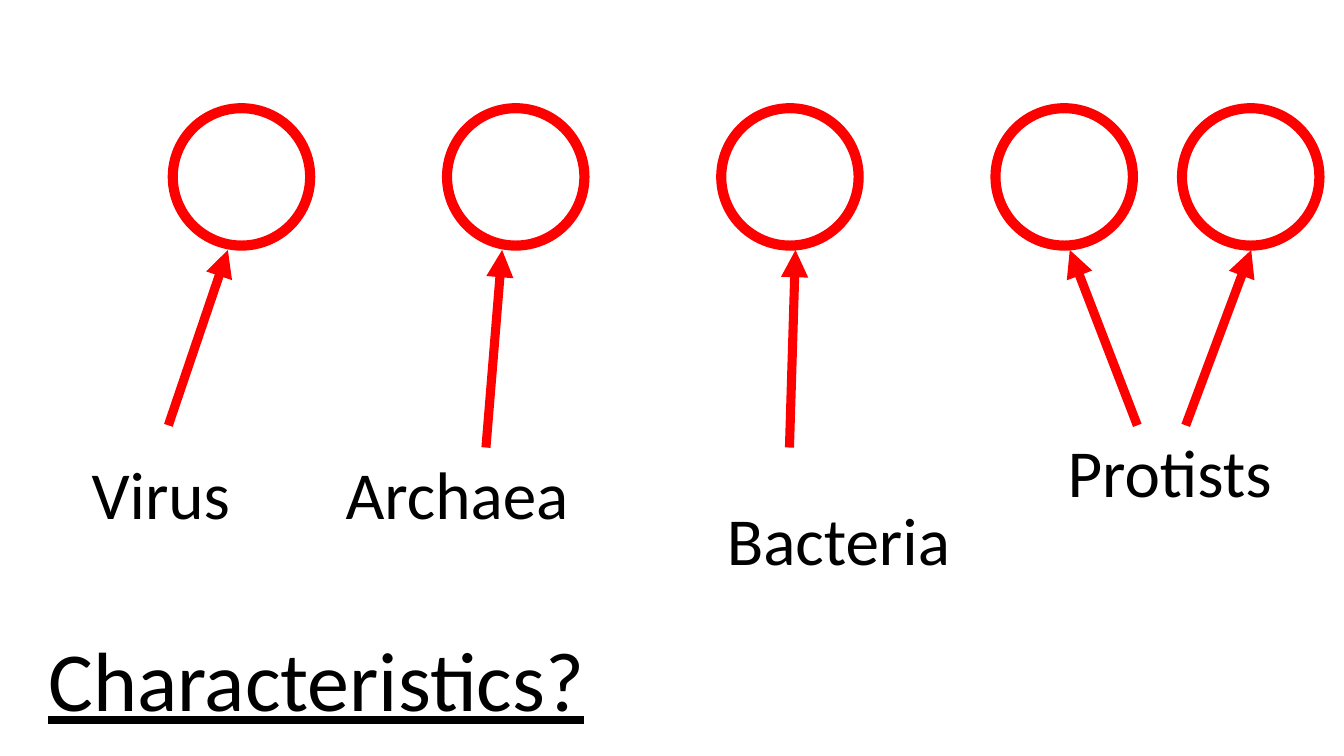
"""Build a slide of four microbe groups with arrows pointing to red rings."""
from dataclasses import dataclass

from lxml import etree
from pptx import Presentation
from pptx import util as u
from pptx.dml.color import RGBColor
from pptx.enum import shapes, text
from pptx.oxml.ns import qn
from pptx.slide import Slide

EMU_PER_PX = 9144


@dataclass(frozen=True)
class Theme:
    font: str = "Calibri"
    ink: RGBColor = RGBColor(0, 0, 0)
    accent: RGBColor = RGBColor(255, 0, 0)
    label_size: int = 48
    question_size: int = 60
    ring_line: float = 1
    arrow_line: float = 6.5


@dataclass(frozen=True)
class Arrow:
    start_x: int
    start_y: int
    tip_x: int


@dataclass(frozen=True)
class Caption:
    wording: str
    left: int
    top: int
    width: int
    height: int = 91
    size: int = Theme.label_size
    underline: bool = False


THEME = Theme()
RING_TOP, RING_SIZE, RING_BAND = 103, 145, 0.06
FIRST_RING, RING_STEP = 167, 272
RING_LEFTS = [FIRST_RING + RING_STEP * i for i in range(4)] + [1168]
ARROWS = [
    Arrow(167, 422, 226),
    Arrow(482, 444, 498),
    Arrow(783, 444, 789),
    Arrow(1128, 422, 1061),
    Arrow(1176, 422, 1241),
]
CAPTIONS = [
    Caption("Virus", 81, 444, 218),
    Caption("Archaea", 333, 444, 274),
    Caption("Bacteria", 711, 489, 248),
    Caption("Protists", 1049, 422, 253),
    Caption("Characteristics?", 38, 618, 721, 111, THEME.question_size, True),
]


def px(length: int) -> u.Emu:
    return u.Emu(length * EMU_PER_PX)


def draw_ring(slide: Slide, left: int) -> None:
    ring = slide.shapes.add_shape(
        shapes.MSO_SHAPE.DONUT, px(left), px(RING_TOP), px(RING_SIZE), px(RING_SIZE))
    ring.adjustments[0] = RING_BAND
    ring.shadow.inherit = False
    ring.fill.solid()
    ring.fill.fore_color.rgb = THEME.accent
    ring.line.color.rgb = THEME.accent
    ring.line.width = u.Pt(THEME.ring_line)


def draw_arrow(slide: Slide, arrow: Arrow) -> None:
    pointer = slide.shapes.add_connector(
        shapes.MSO_CONNECTOR.STRAIGHT, px(arrow.start_x), px(arrow.start_y),
        px(arrow.tip_x), px(RING_TOP + RING_SIZE))
    pointer.line.color.rgb = THEME.accent
    pointer.line.width = u.Pt(THEME.arrow_line)
    etree.SubElement(pointer.line._get_or_add_ln(), qn("a:tailEnd"), type="triangle")
    etree.SubElement(pointer._element.spPr, qn("a:effectLst"))


def draw_caption(slide: Slide, caption: Caption) -> None:
    frame = slide.shapes.add_textbox(
        px(caption.left), px(caption.top), px(caption.width), px(caption.height)).text_frame
    frame.word_wrap = True
    frame.auto_size = text.MSO_AUTO_SIZE.SHAPE_TO_FIT_TEXT
    paragraph = frame.paragraphs[0]
    paragraph.text = caption.wording
    paragraph.font.name = THEME.font
    paragraph.font.size = u.Pt(caption.size)
    paragraph.font.color.rgb = THEME.ink
    paragraph.font.underline = caption.underline


def main() -> None:
    deck = Presentation()
    deck.slide_width, deck.slide_height = px(1333), px(750)
    slide = deck.slides.add_slide(deck.slide_layouts[6])
    for left in RING_LEFTS:
        draw_ring(slide, left)
    for arrow in ARROWS:
        draw_arrow(slide, arrow)
    for caption in CAPTIONS:
        draw_caption(slide, caption)
    deck.save("out.pptx")


if __name__ == "__main__":
    main()
